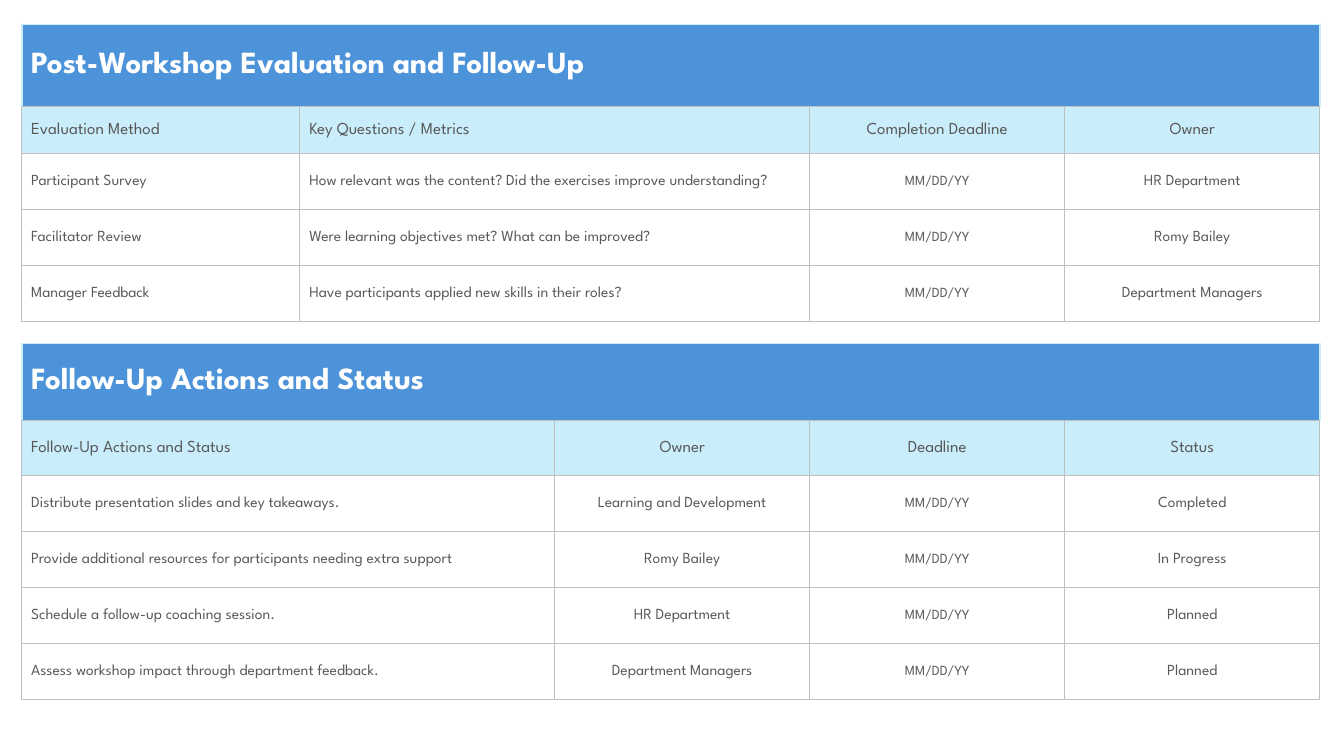
from lxml.etree import SubElement
from pptx import Presentation
from pptx.dml.color import RGBColor
from pptx.enum.text import MSO_ANCHOR as ANCHOR, PP_ALIGN as ALIGN
from pptx.oxml.ns import qn
from pptx.util import Pt

FONT = "League Spartan"
COLORS = {
    "title": "4D93D9",
    "header": "CAEDFB",
    "white": "FFFFFF",
    "text": "595959",
    "grid": "BFBFBF",
}
LEFT = 15.5
ROW_HEIGHT = 40
NARROW = 182.2
DATE = "MM/DD/YY"

EVALUATION = [
    ["Evaluation Method", "Key Questions / Metrics", "Completion Deadline", "Owner"],
    ["Participant Survey",
     "How relevant was the content? Did the exercises improve understanding?",
     DATE, "HR Department"],
    ["Facilitator Review", "Were learning objectives met? What can be improved?",
     DATE, "Romy Bailey"],
    ["Manager Feedback", "Have participants applied new skills in their roles?",
     DATE, "Department Managers"],
]
ACTIONS = [
    ["Follow-Up Actions and Status", "Owner", "Deadline", "Status"],
    ["Distribute presentation slides and key takeaways.",
     "Learning and Development", DATE, "Completed"],
    ["Provide additional resources for participants needing extra support",
     "Romy Bailey", DATE, "In Progress"],
    ["Schedule a follow-up coaching session.", "HR Department", DATE, "Planned"],
    ["Assess workshop impact through department feedback.",
     "Department Managers", DATE, "Planned"],
]


def set_borders(cell, is_title):
    tcPr = cell._tc.get_or_add_tcPr()
    for side in "LRTB":
        pale = is_title and side != "B"
        ln = SubElement(tcPr, qn(f"a:ln{side}"), w=str(Pt(1.5 if pale else 1)))
        fill = SubElement(ln, qn("a:solidFill"))
        SubElement(fill, qn("a:srgbClr"), val=COLORS["header" if pale else "grid"])


def style_cell(cell, fill=None, is_title=False):
    set_borders(cell, is_title)
    if fill:
        cell.fill.solid()
        cell.fill.fore_color.rgb = RGBColor.from_string(COLORS[fill])
    else:
        cell.fill.background()


def write_cell(cell, text, size, color="text", bold=False, centered=False):
    cell.vertical_anchor = ANCHOR.MIDDLE
    cell.margin_left = Pt(0.75 if centered else 6.75)
    cell.margin_right = cell.margin_top = Pt(0.75)
    cell.margin_bottom = 0
    cell.text_frame.text = text
    p = cell.text_frame.paragraphs[0]
    p.alignment = ALIGN.CENTER if centered else ALIGN.LEFT
    font = p.runs[0].font
    font.name, font.size, font.bold = FONT, Pt(size), bold
    font.color.rgb = RGBColor.from_string(COLORS[color])


def add_titled_table(slide, top, title, rows, widths, top_heights, left_cols):
    heights = top_heights + [ROW_HEIGHT] * (len(rows) - 1)
    frame = slide.shapes.add_table(len(heights), len(widths), Pt(LEFT), Pt(top),
                                   Pt(sum(widths)), Pt(sum(heights)))
    table = frame.table
    table.first_row = table.horz_banding = False
    for column, width in zip(table.columns, widths):
        column.width = Pt(width)
    for row, height in zip(table.rows, heights):
        row.height = Pt(height)

    # Title band across all columns
    for c in range(len(widths)):
        style_cell(table.cell(0, c), "title", is_title=True)
    table.cell(0, 0).merge(table.cell(0, len(widths) - 1))
    write_cell(table.cell(0, 0), title, 22, "white", bold=True)

    # Column headings, then the entries
    for r, texts in enumerate(rows, start=1):
        for c, text in enumerate(texts):
            cell = table.cell(r, c)
            style_cell(cell, "header" if r == 1 else None)
            size = 12 if r == 1 else 10 if text == DATE else 11
            write_cell(cell, text, size, centered=c >= left_cols)


def main():
    prs = Presentation()
    prs.slide_width, prs.slide_height = Pt(960), Pt(540)
    slide = prs.slides.add_slide(prs.slide_layouts[6])
    add_titled_table(slide, 17.5, "Post-Workshop Evaluation and Follow-Up", EVALUATION,
                     [198.7, 364.2, NARROW, NARROW], [58.4, 33.6], left_cols=2)
    add_titled_table(slide, 245.3, "Follow-Up Actions and Status", ACTIONS,
                     [380.7] + [NARROW] * 3, [55.2, 38.9], left_cols=1)
    prs.save("out.pptx")


if __name__ == "__main__":
    main()
